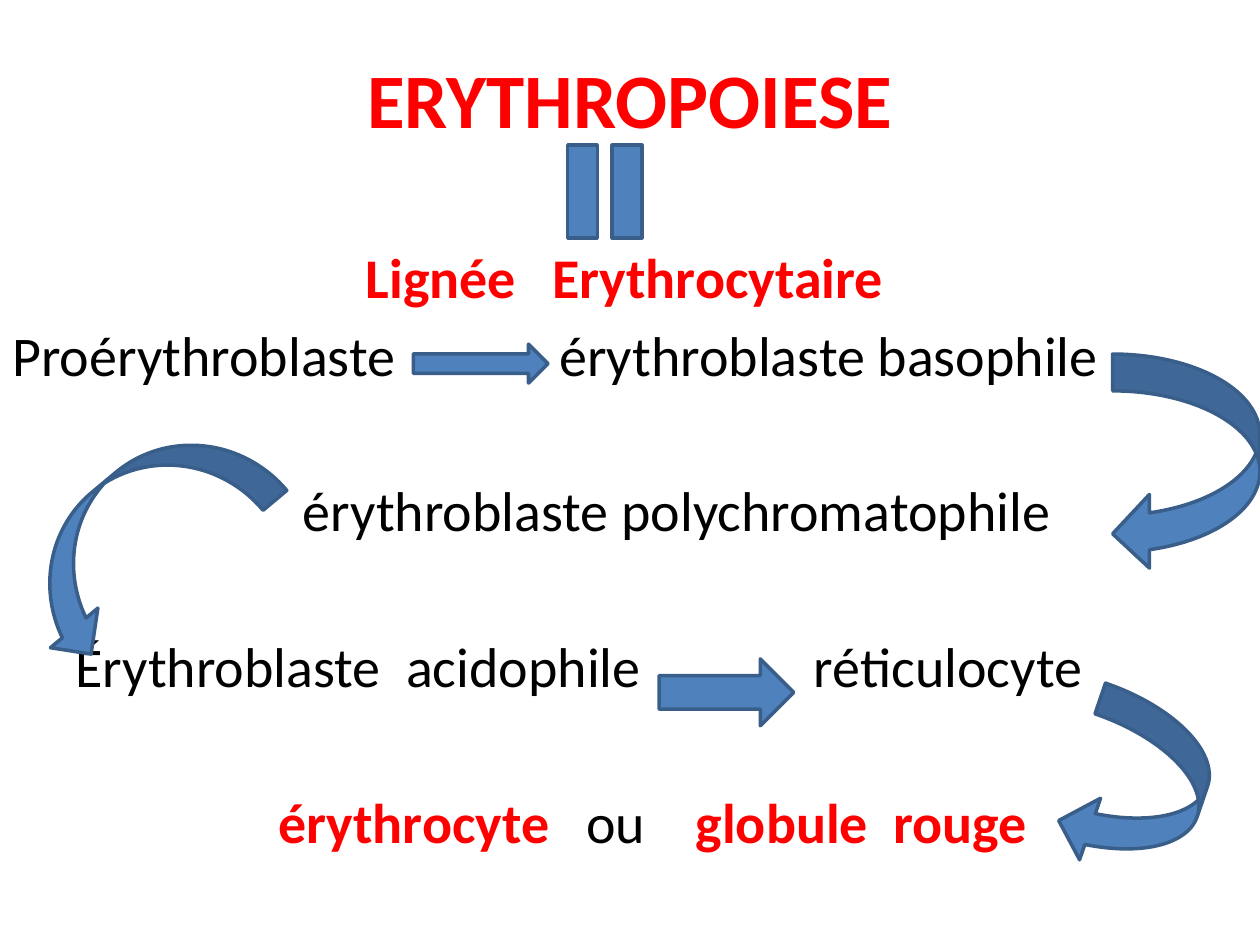
from lxml.etree import SubElement
from pptx import Presentation
from pptx.dml.color import RGBColor
from pptx.enum.shapes import MSO_SHAPE as Shape
from pptx.enum.text import MSO_ANCHOR as Anchor, PP_ALIGN as Align
from pptx.oxml.ns import qn
from pptx.util import Pt

COLORS = {"red": "FF0000", "black": "000000", "fill": "4F81BD", "line": "395E89"}
LINE_GAP, ROW_GAP = 6, 50.6

# Each row: space before, then (left offset, text, color) for each phrase
ROWS = [
    (0, [(202, "Lignée", "red"), (308.5, "Erythrocytaire", "red")]),
    (LINE_GAP, [(0, "Proérythroblaste", "black"),
                (312.5, "érythroblaste basophile", "black")]),
    (ROW_GAP, [(166, "érythroblaste polychromatophile", "black")]),
    (ROW_GAP, [(36, "Érythroblaste  acidophile", "black"),
               (458, "réticulocyte", "black")]),
    (ROW_GAP, [(152, "érythrocyte", "red"), (328, "ou", "black"),
               (390.5, "globule  rouge", "red")]),
]

# Preset, left, top, width, height, rotation
ARROWS = [
    (Shape.MATH_EQUAL, 309.6, 73.4, 72, 72, 270),
    (Shape.RIGHT_ARROW, 236.2, 196.6, 77, 22.3, 0),
    (Shape.CURVED_LEFT_ARROW, 635.8, 202.3, 84.2, 123.8, 0),
    (Shape.CURVED_RIGHT_ARROW, 43.2, 223.9, 70.6, 163.4, 50.1),
    (Shape.DOWN_ARROW, 396, 357.1, 38.2, 77, 270),
    (Shape.CURVED_LEFT_ARROW, 613.4, 399.6, 74.2, 101.5, 18.8),
]


class SlideBuilder:
    def __init__(self, slide, font="Calibri"):
        self.slide = slide
        self.font = font

    def color(self, name):
        return RGBColor.from_string(COLORS[name])

    def text_frame(self, left, top, width, height, anchor=Anchor.TOP):
        box = self.slide.shapes.add_textbox(Pt(left), Pt(top), Pt(width), Pt(height))
        frame = box.text_frame
        frame.word_wrap = True
        frame.vertical_anchor = anchor
        return frame

    def span(self, para, text, size, color):
        """Add a run; red marks emphasis and is always bold."""
        span = para.add_run()
        span.text = text
        span.font.name = self.font
        span.font.size = Pt(size)
        span.font.bold = color == "red"
        span.font.color.rgb = self.color(color)

    def title(self, text):
        frame = self.text_frame(36, 21.6, 648, 68.4, Anchor.MIDDLE)
        para = frame.paragraphs[0]
        para.alignment = Align.CENTER
        self.span(para, text, 44, "red")

    def rows(self, rows):
        """Write one paragraph per row, each phrase at its own tab stop."""
        frame = self.text_frame(0, 135, 720, 405)
        for index, (gap, phrases) in enumerate(rows):
            para = frame.paragraphs[0] if index == 0 else frame.add_paragraph()
            para.space_before = Pt(gap)
            tabs = SubElement(para._p.get_or_add_pPr(), qn("a:tabLst"))
            for offset, text, color in phrases:
                if offset:
                    SubElement(tabs, qn("a:tab"), pos=str(int(Pt(offset))), algn="l")
                    text = "\t" + text
                self.span(para, text, 32, color)

    def arrow(self, preset, left, top, width, height, rotation):
        shape = self.slide.shapes.add_shape(
            preset, Pt(left), Pt(top), Pt(width), Pt(height))
        shape.rotation = rotation
        shape.shadow.inherit = False
        shape.fill.solid()
        shape.fill.fore_color.rgb = self.color("fill")
        shape.line.color.rgb = self.color("line")
        shape.line.width = Pt(2)


def main():
    deck = Presentation()
    deck.slide_width, deck.slide_height = Pt(720), Pt(540)
    page = SlideBuilder(deck.slides.add_slide(deck.slide_layouts[6]))
    page.title("ERYTHROPOIESE")
    page.rows(ROWS)
    for arrow in ARROWS:
        page.arrow(*arrow)
    deck.save("out.pptx")


if __name__ == "__main__":
    main()
